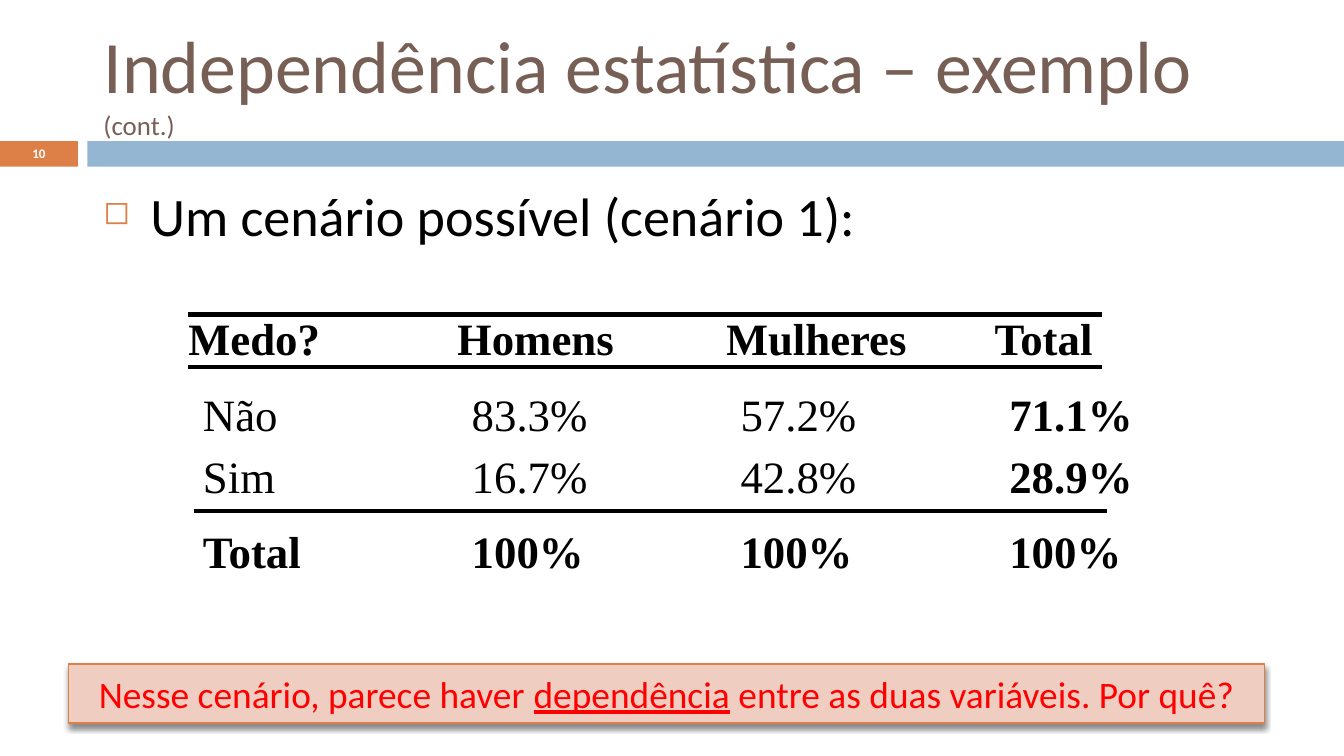
"""Build the slide on statistical independence, scenario 1."""
import pptx
import pptx.util
import pptx.dml.color
import pptx.enum.shapes
import pptx.enum.text
import pptx.oxml
import pptx.oxml.ns
import lxml.etree

Inches = pptx.util.Inches
Pt = pptx.util.Pt
ALIGN = pptx.enum.text.PP_ALIGN
ANCHOR = pptx.enum.text.MSO_ANCHOR
RECTANGLE = pptx.enum.shapes.MSO_SHAPE.RECTANGLE

COLORS = {"title": "775F55", "accent": "DD8047", "band": "94B6D2", "text": "000000",
          "note": "EFCDC1", "alert": "FF0000", "white": "FFFFFF"}
TITLE = [("Independência estatística – exemplo ", {"size": 39.6}), ("(cont.)", {"size": 14.4})]
BULLET = [("Um cenário possível (cenário 1):", {})]
NOTE = [("Nesse cenário, parece haver ", {}), ("dependência", {"underline": True}),
        (" entre as duas variáveis. Por quê?", {})]
ROWS = [
    ("Medo?", "Homens", "Mulheres", "Total"),
    ("Não", "83.3%", "57.2%", "71.1%"),
    ("Sim", "16.7%", "42.8%", "28.9%"),
    ("Total", "100%", "100%", "100%"),
]
COLUMN_WIDTHS = [2, 2, 2, 1.2]
ROW_HEIGHTS = [0.39, 0.62, 0.44, 0.56]
TABLE_LEFT, TABLE_TOP, RULE_LENGTH = 1.4, 2.32, 6.8
RULES = [(1.4, 2.34), (1.4, 2.73), (1.44, 3.8)]


def rgb(name):
    return pptx.dml.color.RGBColor.from_string(COLORS[name])


def write(paragraph, pieces, size, color, font="Calibri", bold=False):
    for text, style in pieces:
        run = paragraph.add_run()
        run.text = text
        run.font.name = font
        run.font.size = Pt(style.get("size", size))
        run.font.color.rgb = rgb(color)
        run.font.bold = bold
        run.font.underline = style.get("underline", False)


def add_text(slide, place, pieces, size, color, align=ALIGN.LEFT, anchor=ANCHOR.TOP, bold=False):
    frame = slide.shapes.add_textbox(*map(Inches, place)).text_frame
    frame.word_wrap = True
    frame.vertical_anchor = anchor
    paragraph = frame.paragraphs[0]
    paragraph.alignment = align
    write(paragraph, pieces, size, color, bold=bold)
    return paragraph


def add_rectangle(slide, place, fill):
    shape = slide.shapes.add_shape(RECTANGLE, *map(Inches, place))
    shape.shadow.inherit = False
    shape.fill.solid()
    shape.fill.fore_color.rgb = rgb(fill)
    shape.line.fill.background()
    return shape


def add_title(slide):
    title = slide.shapes.title
    title.left, title.top, title.width, title.height = map(Inches, (0.67, 0.19, 8.92, 0.81))
    frame = title.text_frame
    frame.word_wrap = True
    frame.auto_size = pptx.enum.text.MSO_AUTO_SIZE.NONE
    frame.vertical_anchor = ANCHOR.MIDDLE
    frame.paragraphs[0].alignment = ALIGN.LEFT
    write(frame.paragraphs[0], TITLE, 39.6, "title")


def add_bullet(slide):
    paragraph = add_text(slide, (0.67, 1.31, 8.92, 3.69), BULLET, 29, "text")
    paragraph.space_before = Pt(7)
    properties = paragraph._p.get_or_add_pPr()
    properties.set("marL", str(Inches(0.35)))
    properties.set("indent", str(Inches(-0.35)))
    namespace = pptx.oxml.ns.nsdecls("a")
    for xml in (f'<a:buClr {namespace}><a:srgbClr val="{COLORS["accent"]}"/></a:buClr>',
                f'<a:buSzPct {namespace} val="60000"/>',
                f'<a:buChar {namespace} char="◻"/>'):
        properties.append(pptx.oxml.parse_xml(xml))


def add_fear_table(slide):
    table = slide.shapes.add_table(
        len(ROWS), len(COLUMN_WIDTHS), Inches(TABLE_LEFT), Inches(TABLE_TOP),
        Inches(sum(COLUMN_WIDTHS)), Inches(sum(ROW_HEIGHTS))).table
    table.first_row = table.horz_banding = False
    for column, width in zip(table.columns, COLUMN_WIDTHS):
        column.width = Inches(width)
    for r, values in enumerate(ROWS):
        table.rows[r].height = Inches(ROW_HEIGHTS[r])
        for c, value in enumerate(values):
            cell = table.cell(r, c)
            cell.fill.background()
            cell.vertical_anchor = ANCHOR.BOTTOM
            cell.margin_left = Inches(0.11 if r else 0)
            cell.margin_bottom = Inches(0.06 if r else 0)
            cell.margin_top = cell.margin_right = 0
            bold = r in (0, len(ROWS) - 1) or c == len(values) - 1
            write(cell.text_frame.paragraphs[0], [(value, {})], 24, "text", "Times New Roman", bold)
    for left, top in RULES:
        rule = slide.shapes.add_connector(
            pptx.enum.shapes.MSO_CONNECTOR.STRAIGHT,
            *map(Inches, (left, top, left + RULE_LENGTH, top)))
        rule.line.color.rgb = rgb("text")
        rule.line.width = Pt(2.25)
        lxml.etree.SubElement(rule._element.spPr, pptx.oxml.ns.qn("a:effectLst"))


def add_note(slide):
    note = add_rectangle(slide, (0.51, 4.94, 8.9, 0.44), "note")
    note.line.color.rgb = rgb("accent")
    note.line.width = Pt(0.79)
    effects = note._element.spPr.find(pptx.oxml.ns.qn("a:effectLst"))
    effects.append(pptx.oxml.parse_xml(
        f'<a:outerShdw {pptx.oxml.ns.nsdecls("a")} blurRad="{Pt(3)}" dist="{Pt(2.4)}" '
        'dir="5400000" rotWithShape="0"><a:srgbClr val="000000"><a:alpha val="45000"/>'
        '</a:srgbClr></a:outerShdw>'))
    note.text_frame.word_wrap = True
    paragraph = note.text_frame.paragraphs[0]
    paragraph.alignment = ALIGN.CENTER
    write(paragraph, NOTE, 20, "alert")


def main():
    presentation = pptx.Presentation()
    presentation.slide_width = Inches(10)
    presentation.slide_height = Inches(10 * 9 / 16)
    slide = presentation.slides.add_slide(presentation.slide_layouts[5])
    add_rectangle(slide, (0, 1.05, 0.58, 0.19), "accent")
    add_rectangle(slide, (0.65, 1.05, 9.35, 0.19), "band")
    add_title(slide)
    add_text(slide, (0, 1.04, 0.58, 0.2), [("10", {})], 7, "white",
             ALIGN.CENTER, ANCHOR.MIDDLE, bold=True)
    add_bullet(slide)
    add_fear_table(slide)
    add_note(slide)
    presentation.save("out.pptx")


if __name__ == "__main__":
    main()
